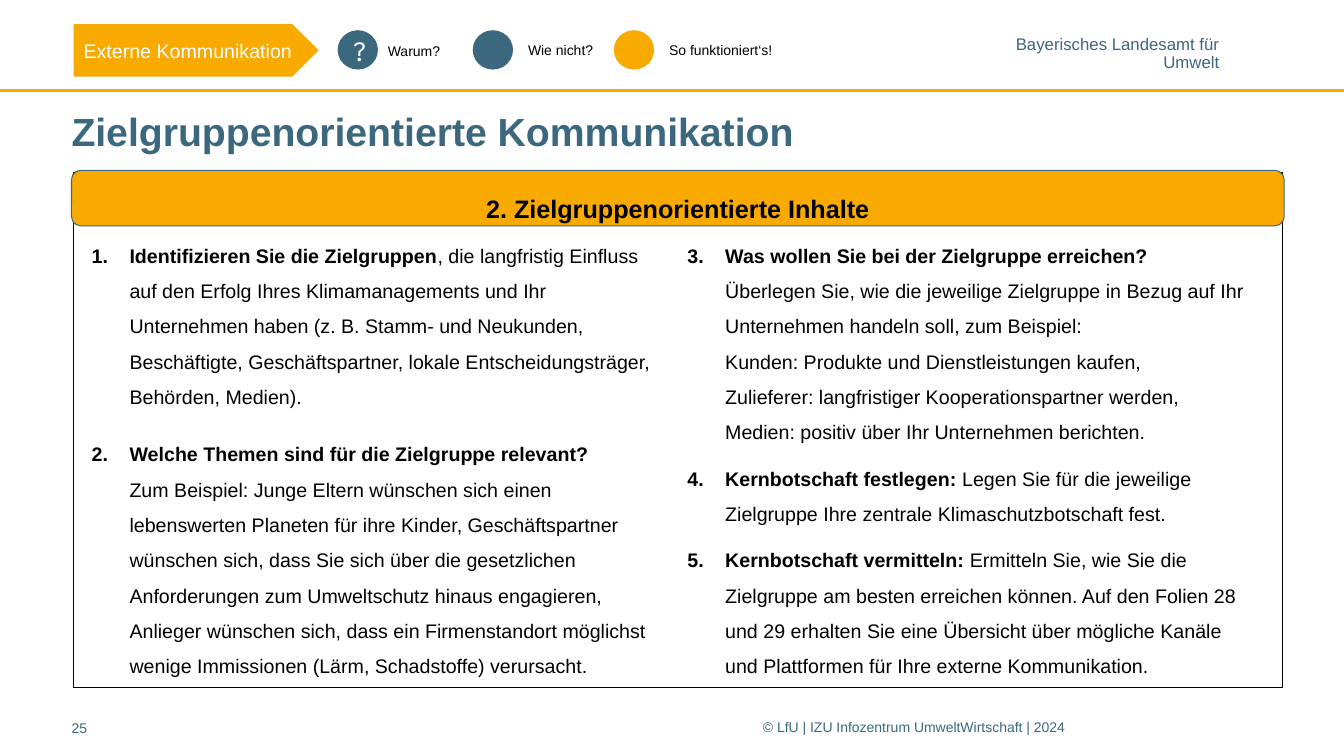
"""Build the slide on audience-oriented communication."""
import pptx
import pptx.dml.color
import pptx.enum.shapes
import pptx.enum.text
import pptx.oxml
import pptx.oxml.ns
import pptx.util

Pt = pptx.util.Pt
RGBColor = pptx.dml.color.RGBColor
Shape = pptx.enum.shapes.MSO_SHAPE
Align = pptx.enum.text.PP_ALIGN
Anchor = pptx.enum.text.MSO_ANCHOR

ORANGE = RGBColor(0xF9, 0xAA, 0x00)
TEAL = RGBColor(0x3B, 0x68, 0x7F)
BLACK = RGBColor(0, 0, 0)
WHITE = RGBColor(0xFF, 0xFF, 0xFF)

FLAT = (0, 3.6, 0, 3.6)
STEPS = [
    (241.2, TEAL, "?", 270, 26.64, "Warum?"),
    (337.7, TEAL, "", 370.1, 25.92, "Wie nicht?"),
    (438.5, ORANGE, "", 470.9, 25.92, "So funktioniert‘s!"),
]
COLUMNS = [
    (51.1, 334.8, 1, [
        ("Identifizieren Sie die Zielgruppen",
         ", die langfristig Einfluss auf den Erfolg Ihres Klimamanagements und Ihr "
         "Unternehmen haben (z. B. Stamm- und Neukunden, Beschäftigte, "
         "Geschäftspartner, lokale Entscheidungsträger, Behörden, Medien)."),
        ("Welche Themen sind für die Zielgruppe relevant?",
         "\nZum Beispiel: Junge Eltern wünschen sich einen lebenswerten Planeten für "
         "ihre Kinder, Geschäftspartner wünschen sich, dass Sie sich über die "
         "gesetzlichen Anforderungen zum Umweltschutz hinaus engagieren, Anlieger "
         "wünschen sich, dass ein Firmenstandort möglichst wenige Immissionen "
         "(Lärm, Schadstoffe) verursacht."),
    ], 16),
    (476.6, 359.3, 3, [
        ("Was wollen Sie bei der Zielgruppe erreichen?",
         "\nÜberlegen Sie, wie die jeweilige Zielgruppe in Bezug auf Ihr Unternehmen "
         "handeln soll, zum Beispiel:\nKunden: Produkte und Dienstleistungen kaufen,"
         "\nZulieferer: langfristiger Kooperationspartner werden, Medien: positiv "
         "über Ihr Unternehmen berichten."),
        ("Kernbotschaft festlegen:",
         " Legen Sie für die jeweilige Zielgruppe Ihre zentrale "
         "Klimaschutzbotschaft fest."),
        ("Kernbotschaft vermitteln:",
         " Ermitteln Sie, wie Sie die Zielgruppe am besten erreichen können. Auf den "
         "Folien 28 und 29 erhalten Sie eine Übersicht über mögliche Kanäle und "
         "Plattformen für Ihre externe Kommunikation."),
    ], 8),
]


def apply(target, values):
    """Set every attribute named in values on target."""
    for name, value in values.items():
        setattr(target, name, value)


class SlideBuilder:
    """Hold the text style and the current slide."""

    def __init__(self, slide, font="Arial"):
        """Remember the slide and its standard font."""
        self.slide = slide
        self.font = font

    def frame(self, shape, insets, anchor, wrap=True):
        """Set margins and anchor of a shape's text and return its frame."""
        frame = shape.text_frame
        sides = ("margin_left", "margin_top", "margin_right", "margin_bottom")
        apply(frame, {side: Pt(inset) for side, inset in zip(sides, insets)})
        apply(frame, {"word_wrap": wrap, "vertical_anchor": anchor})
        return frame

    def runs(self, paragraph, text, size, color, bold=False, font=None):
        """Add text to a paragraph, breaking lines at newlines."""
        for index, line in enumerate(text.split("\n")):
            if index:
                paragraph.add_line_break()
            if line:
                run = paragraph.add_run()
                run.text = line
                apply(run.font, {"name": font or self.font, "size": Pt(size), "bold": bold})
                run.font.color.rgb = color

    def paragraphs(self, frame, lines, size, color, bold=False, font=None, **layout):
        """Add one formatted paragraph for each line."""
        for index, line in enumerate(lines):
            paragraph = frame.add_paragraph() if index else frame.paragraphs[0]
            apply(paragraph, layout)
            self.runs(paragraph, line, size, color, bold, font)

    def text(self, box, lines, size, color, insets=(7.2, 3.6, 7.2, 3.6),
             anchor=Anchor.TOP, wrap=True, **style):
        """Add a text box."""
        shape = self.slide.shapes.add_textbox(*map(Pt, box))
        self.paragraphs(self.frame(shape, insets, anchor, wrap), lines, size, color, **style)

    def shape(self, kind, box, fill=None, line=None, text="", size=14, color=BLACK,
              anchor=Anchor.MIDDLE, **style):
        """Add a preset shape with optional text."""
        shape = self.slide.shapes.add_shape(kind, *map(Pt, box))
        shape.shadow.inherit = False
        if fill is None:
            shape.fill.background()
        else:
            shape.fill.solid()
            shape.fill.fore_color.rgb = fill
        if line is None:
            shape.line.fill.background()
        else:
            shape.line.color.rgb = line
            shape.line.width = Pt(0.75)
        if text:
            frame = self.frame(shape, (7.2, 3.6, 7.2, 3.6), anchor)
            self.paragraphs(frame, [text], size, color, **style)

    def rule(self, start, end, color, width):
        """Add a straight line."""
        line = self.slide.shapes.add_connector(
            pptx.enum.shapes.MSO_CONNECTOR.STRAIGHT, *map(Pt, start + end))
        line.line.color.rgb = color
        line.line.width = Pt(width)
        properties = line._element.spPr
        properties.append(properties.makeelement(pptx.oxml.ns.qn("a:effectLst"), {}))

    def numbered(self, box, start, items, gap):
        """Add a numbered list with bold lead-ins."""
        shape = self.slide.shapes.add_textbox(*map(Pt, box))
        frame = self.frame(shape, (14.4,) * 4, Anchor.TOP)
        for index, (lead, rest) in enumerate(items):
            paragraph = frame.add_paragraph() if index else frame.paragraphs[0]
            properties = paragraph._p.get_or_add_pPr()
            properties.set("marL", str(Pt(27)))
            properties.set("indent", str(-Pt(27)))
            numbering = pptx.oxml.parse_xml(
                f'<a:buAutoNum {pptx.oxml.ns.nsdecls("a")} '
                f'type="arabicPeriod" startAt="{start}"/>')
            properties.append(numbering)
            apply(paragraph, {"line_spacing": 1.5, "space_before": Pt(gap if index else 0)})
            self.runs(paragraph, lead, 14, BLACK, bold=True)
            self.runs(paragraph, rest, 14, BLACK)


def main():
    """Compose the slide and save it."""
    presentation = pptx.Presentation()
    apply(presentation, {"slide_width": Pt(960), "slide_height": Pt(540)})
    slide = presentation.slides.add_slide(presentation.slide_layouts[6])
    builder = SlideBuilder(slide)

    builder.rule((0, 64.8), (960, 64.8), ORANGE, 2)
    builder.text((725, 26.6, 146, 24.5), ["Bayerisches Landesamt für", "Umwelt"], 12, TEAL,
                 insets=(0,) * 4, wrap=False, alignment=Align.RIGHT, line_spacing=0.85)
    builder.shape(Shape.PENTAGON, (52.6, 17.3, 175, 37.4), ORANGE,
                  text="Externe Kommunikation", color=WHITE, alignment=Align.LEFT)
    for left, fill, symbol, label_left, label_top, label in STEPS:
        builder.shape(Shape.OVAL, (left, 21.6, 28.8, 28.1), fill, text=symbol, size=20,
                      color=WHITE, font="League Spartan", alignment=Align.CENTER)
        builder.text((label_left, label_top, 88.6, 19.4), [label], 10, BLACK)

    builder.text((51.1, 73.4, 878.4, 39.6), ["Zielgruppenorientierte Kommunikation"], 28, TEAL,
                 insets=FLAT, anchor=Anchor.MIDDLE, bold=True)
    for left, height, start, items, gap in COLUMNS:
        builder.numbered((left, 151.2, 430.6, height), start, items, gap)
    builder.shape(Shape.RECTANGLE, (52.6, 123.1, 863.3, 367.9), line=BLACK)
    builder.shape(Shape.ROUNDED_RECTANGLE, (51.1, 121.7, 866.2, 39.6), ORANGE, TEAL,
                  "2. Zielgruppenorientierte Inhalte", 18, anchor=Anchor.TOP, bold=True,
                  alignment=Align.CENTER, line_spacing=1.5)
    builder.text((51.1, 510.5, 50.4, 22.3), ["25"], 10, TEAL, insets=FLAT)
    builder.text((545, 510, 385.9, 22.3),
                 ["© LfU | IZU Infozentrum UmweltWirtschaft | 2024"], 10, TEAL, insets=FLAT)
    presentation.save("out.pptx")


if __name__ == "__main__":
    main()
